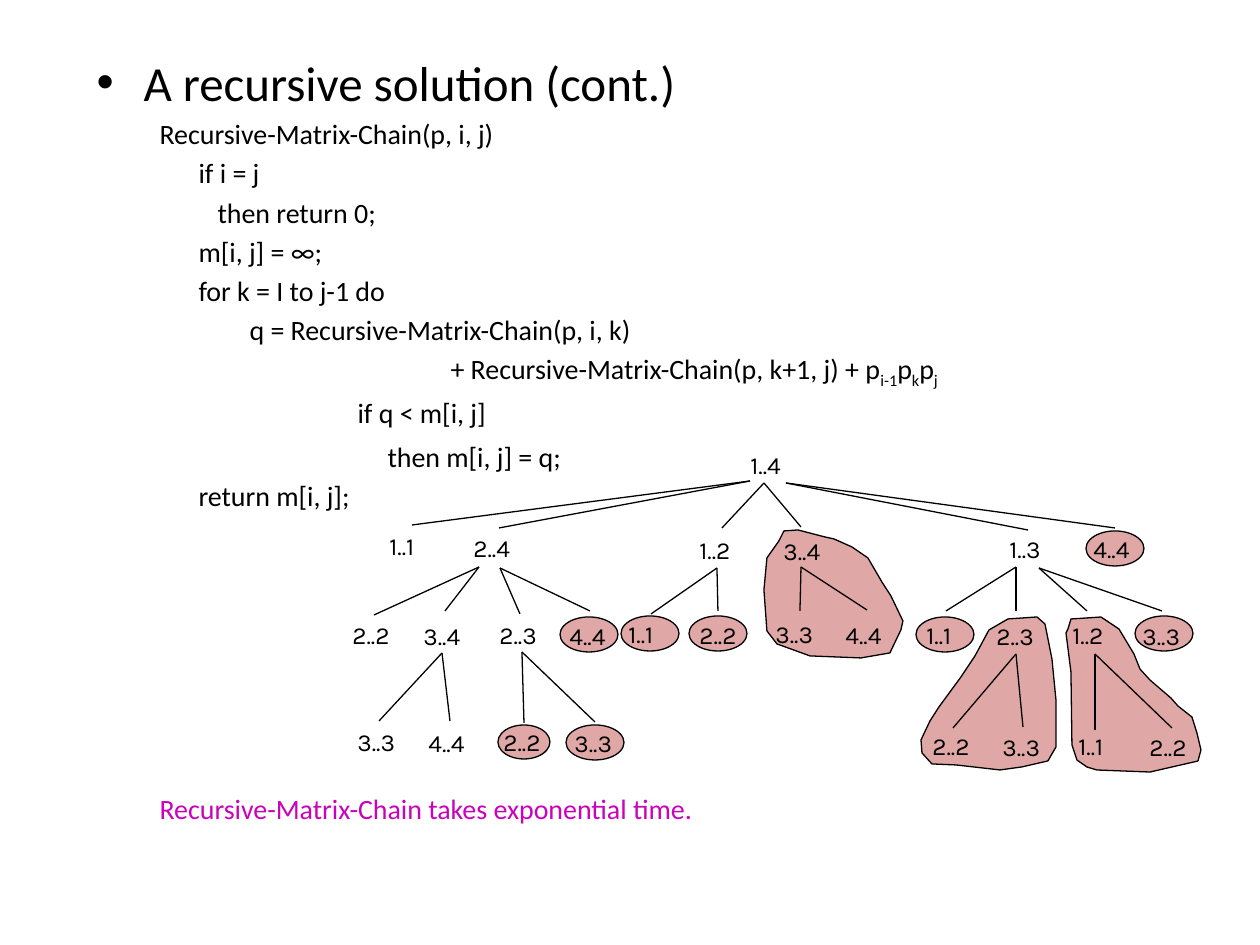
from dataclasses import dataclass
from typing import NamedTuple

from lxml.etree import SubElement
from pptx import Presentation
from pptx.dml.color import RGBColor as Rgb
from pptx.enum.shapes import MSO_CONNECTOR as Link, MSO_SHAPE as Kind
from pptx.enum.text import MSO_AUTO_SIZE as Fit
from pptx.oxml.ns import qn
from pptx.util import Pt

SCALE = 914400 / 126  # EMU in one px

Spot = tuple[int, int]


@dataclass(frozen=True)
class Theme:
    ink: Rgb = Rgb(0, 0, 0)
    note: Rgb = Rgb(0xCA, 0x02, 0xBC)
    mark: Rgb = Rgb(0xC0, 0x50, 0x4D)
    alpha: int = 50
    font: str = "Calibri"
    tree: str = "Karla"
    head: int = 28
    code: int = 16
    node: int = 14
    line: float = 0.75


LOOK = Theme()


class Row(NamedTuple):
    left: int
    text: str
    subs: tuple[str, ...] = ()  # subscript and normal text in turn
    gap: float | None = None
    ink: Rgb = LOOK.ink


class Node(NamedTuple):
    text: str
    x: int
    y: int


class Oval(NamedTuple):
    x: int
    y: int
    w: int = 58
    h: int = 35


class Fork(NamedTuple):
    top: Spot
    ends: tuple[Spot, Spot]


CODE = [
    Row(63, "Recursive-Matrix-Chain(p, i, j)"),
    Row(102, "if i = j"),
    Row(121, "then return 0;"),
    Row(102, "m[i, j] = ∞;"),
    Row(102, "for k = I to j-1 do"),
    Row(153, "q = Recursive-Matrix-Chain(p, i, k)"),
    Row(354, "+ Recursive-Matrix-Chain(p, k+1, j) + p", ("i-1", "p", "k", "p", "j")),
    Row(261, "if q < m[i, j]"),
    Row(291, "then m[i, j] = q;", gap=5.7),
    Row(102, "return m[i, j];"),
    Row(63, "Recursive-Matrix-Chain takes exponential time.", gap=160, ink=LOOK.note),
]

NODES = [
    Node("1..4", 738, 444),
    Node("1..1", 377, 525), Node("2..4", 461, 527), Node("1..2", 687, 529),
    Node("3..4", 771, 530), Node("1..3", 997, 528), Node("4..4", 1081, 528),
    Node("2..2", 340, 614), Node("3..4", 411, 615), Node("2..3", 487, 614),
    Node("4..4", 557, 615), Node("1..1", 616, 613), Node("2..2", 687, 614),
    Node("3..3", 763, 613), Node("4..4", 833, 614), Node("1..1", 914, 614),
    Node("2..3", 984, 615), Node("1..2", 1060, 614), Node("3..3", 1130, 615),
    Node("3..3", 345, 721), Node("4..4", 416, 722), Node("2..2", 491, 721),
    Node("3..3", 562, 722), Node("2..2", 920, 725), Node("3..3", 990, 726),
    Node("1..1", 1066, 725), Node("2..2", 1137, 726),
]

FORKS = [
    Fork((750, 481), ((412, 525), (499, 528))),
    Fork((764, 483), ((722, 528), (801, 527))),
    Fork((786, 483), ((1028, 530), (1115, 528))),
    Fork((479, 567), ((374, 615), (445, 611))),
    Fork((500, 568), ((520, 614), (590, 611))),
    Fork((717, 568), ((651, 614), (718, 611))),
    Fork((801, 567), ((800, 611), (867, 610))),
    Fork((1016, 567), ((946, 611), (1016, 611))),
    Fork((1039, 568), ((1087, 611), (1162, 611))),
    Fork((442, 653), ((379, 721), (450, 721))),
    Fork((522, 652), ((524, 723), (595, 722))),
    Fork((1016, 654), ((953, 728), (1023, 727))),
    Fork((1095, 654), ((1095, 730), (1172, 728))),
]

OVALS = [
    Oval(560, 617), Oval(621, 616), Oval(689, 616), Oval(916, 617),
    Oval(1135, 616), Oval(1086, 531), Oval(566, 725), Oval(498, 725, 52, 34),
]

BLOBS: list[list[Spot]] = [
    [(1071, 619), (1068, 629), (1066, 633), (1071, 672), (1072, 745),
     (1077, 760), (1087, 767), (1097, 770), (1150, 772), (1198, 761),
     (1201, 750), (1197, 733), (1192, 717), (1178, 706), (1171, 698),
     (1150, 680), (1140, 669), (1134, 654), (1119, 629), (1101, 617)],
    [(1008, 619), (989, 630), (975, 656), (961, 677), (939, 707), (930, 721),
     (921, 740), (922, 753), (932, 764), (956, 765), (1000, 770), (1022, 767),
     (1048, 761), (1056, 747), (1056, 700), (1052, 659), (1045, 624),
     (1037, 617)],
    [(779, 541), (767, 558), (764, 590), (767, 631), (777, 644), (810, 656),
     (861, 658), (890, 653), (901, 630), (903, 621), (891, 596), (882, 582),
     (868, 558), (852, 547), (834, 539), (825, 537), (798, 530), (784, 531)],
]


def emu(*px: int) -> list[int]:
    return [round(n * SCALE) for n in px]


def put(para, text: str, size: int, font: str, ink: Rgb = LOOK.ink, sub: bool = False) -> None:
    run = para.add_run()
    run.text = text
    run.font.size, run.font.name = Pt(size), font
    run.font.color.rgb = ink
    if sub:
        run.font._element.set("baseline", "-25000")


def inset(para, left: int, first: int = 0) -> None:
    """Set the left margin and the first line's offset from it."""
    prop = para._p.get_or_add_pPr()
    for name, size in zip(("marL", "indent"), emu(left, first)):
        prop.set(name, str(size))


def write(body) -> None:
    body.left, body.top, body.width, body.height = emu(84, 46, 1134, 809)
    frame = body.text_frame
    frame.auto_size = Fit.NONE
    head = frame.paragraphs[0]
    inset(head, 47, -47)
    put(head, "A recursive solution (cont.)", LOOK.head, LOOK.font)
    for row in CODE:
        para = frame.add_paragraph()
        para.level = 1
        inset(para, row.left)
        if row.gap is not None:
            para.space_before = Pt(row.gap)
        SubElement(para._p.get_or_add_pPr(), qn("a:buNone"))
        for i, text in enumerate((row.text, *row.subs)):
            put(para, text, LOOK.code, LOOK.font, row.ink, sub=i % 2 == 1)


def tint(shape) -> None:
    """Give a highlight its see-through fill and thin outline."""
    shape.shadow.inherit = False
    shape.fill.solid()
    shape.fill.fore_color.rgb = LOOK.mark
    color = shape.fill._xPr.find(".//" + qn("a:srgbClr"))
    SubElement(color, qn("a:alpha"), val=str(LOOK.alpha * 1000))
    shape.line.color.rgb = LOOK.ink
    shape.line.width = Pt(LOOK.line)


def blob(shapes, spots: list[Spot]) -> None:
    pen = shapes.build_freeform(*spots[0], scale=SCALE)
    pen.add_line_segments(spots[1:], close=True)
    tint(pen.convert_to_shape())


def label(shapes, node: Node) -> None:
    frame = shapes.add_textbox(*emu(node.x, node.y, 67, 42)).text_frame
    frame.word_wrap = False
    frame.auto_size = Fit.SHAPE_TO_FIT_TEXT
    put(frame.paragraphs[0], node.text, LOOK.node, LOOK.tree)


def split(shapes, fork: Fork) -> None:
    for end in fork.ends:
        line = shapes.add_connector(Link.STRAIGHT, *emu(*fork.top, *end))
        line.line.color.rgb = LOOK.ink
        line.line.width = Pt(LOOK.line)
        SubElement(line._element.spPr, qn("a:effectLst"))


def main() -> None:
    deck = Presentation()
    deck.slide_width, deck.slide_height = emu(1260, 945)
    slide = deck.slides.add_slide(deck.slide_layouts[1])
    title = slide.shapes.title._element
    title.getparent().remove(title)
    body = slide.placeholders[1]
    write(body)
    for oval in OVALS:
        tint(slide.shapes.add_shape(Kind.OVAL, *emu(*oval)))
    for spots in BLOBS:
        blob(slide.shapes, spots)
    slide.shapes._spTree.append(body._element)  # text lies over the highlights
    tree = slide.shapes.add_group_shape().shapes
    for node in NODES:
        label(tree, node)
    for fork in FORKS:
        split(tree, fork)
    deck.save("out.pptx")


if __name__ == "__main__":
    main()
